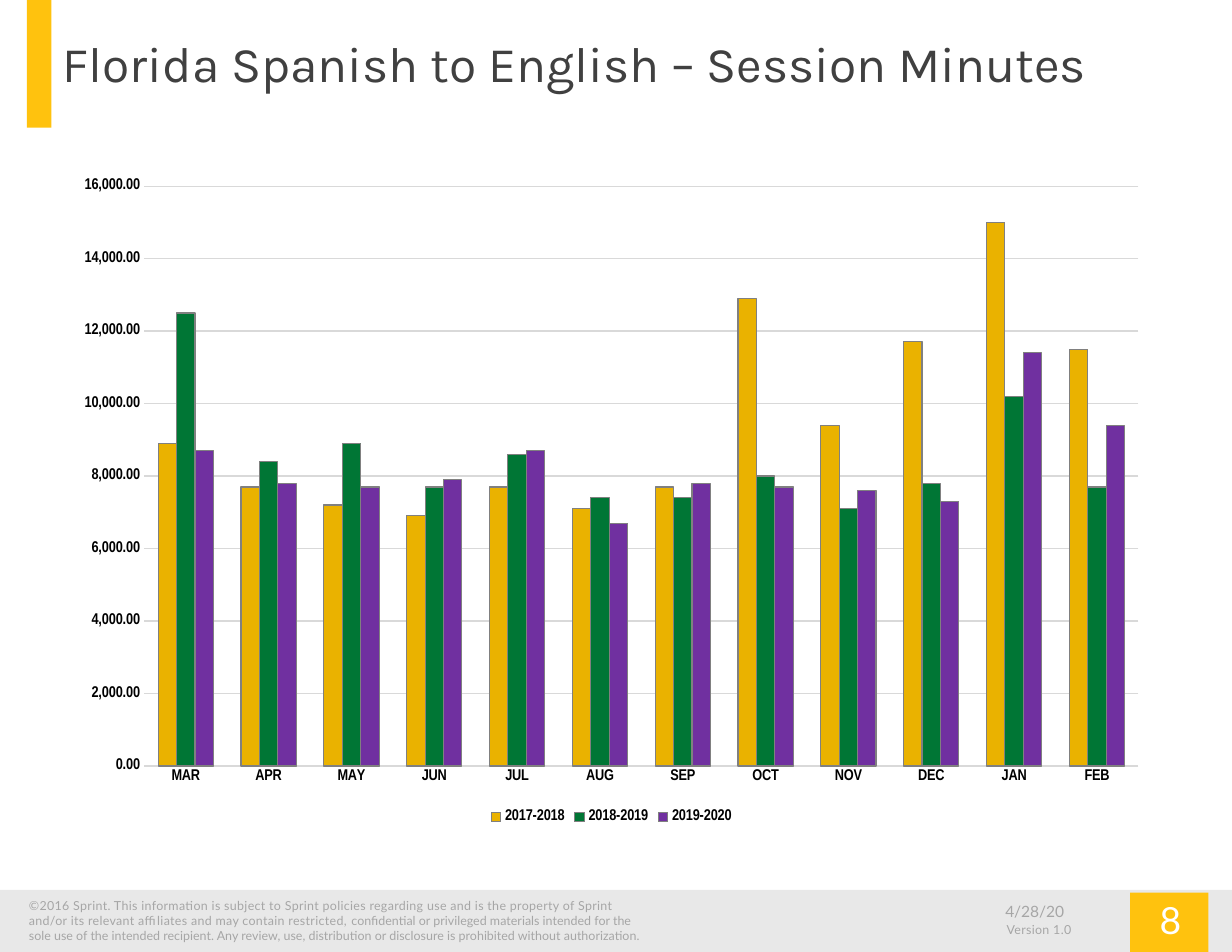
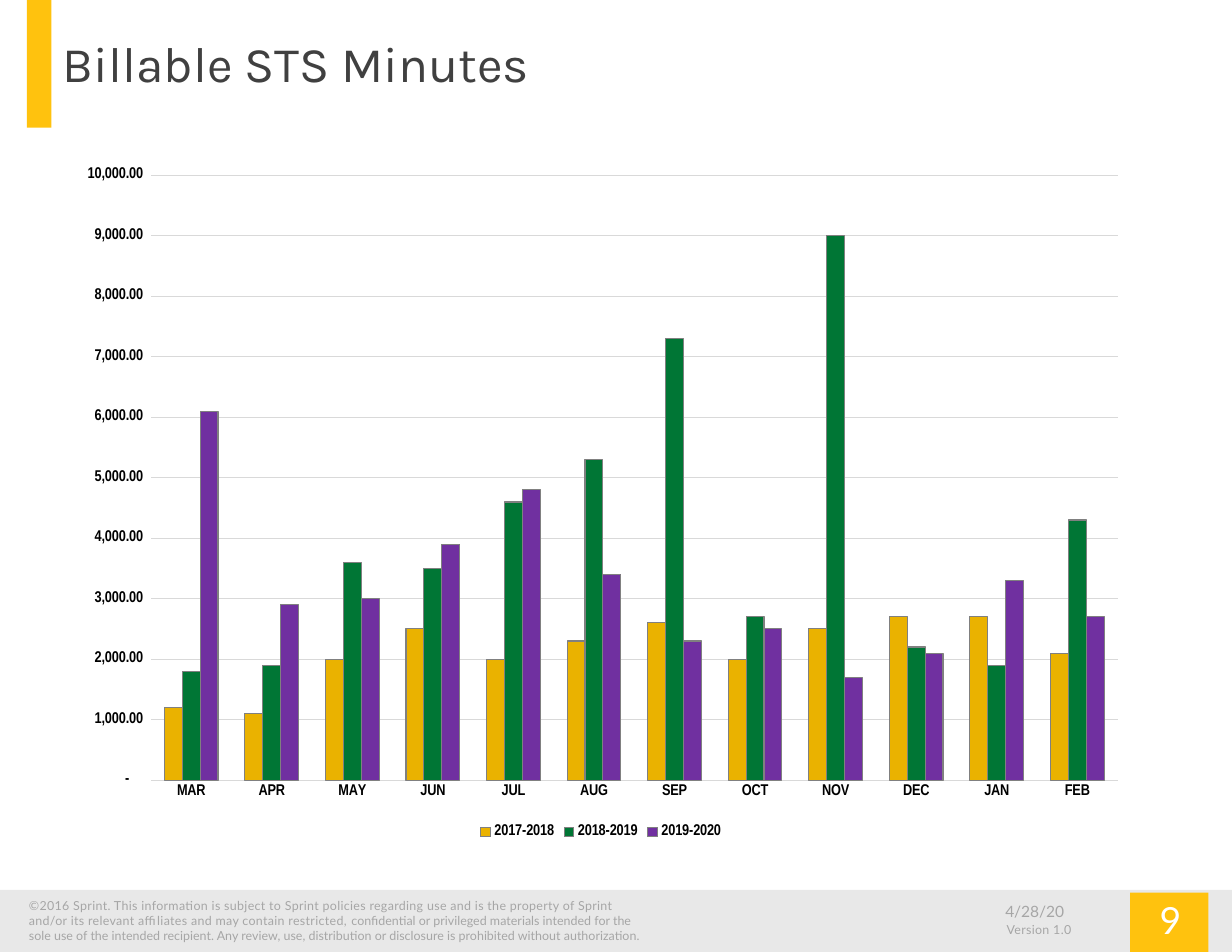
"""Build two slides of monthly minutes as clustered column charts."""
from pptx import Presentation
from pptx.chart.data import CategoryChartData
from pptx.dml.color import RGBColor
from pptx.enum.chart import XL_CHART_TYPE, XL_LEGEND_POSITION, XL_TICK_MARK
from pptx.enum.shapes import MSO_SHAPE
from pptx.enum.text import MSO_ANCHOR, PP_ALIGN
from pptx.util import Pt

COLORS = {
    "accent": "FFC20E", "band": "E8E8E8", "muted": "A6A6A6", "white": "FFFFFF",
    "title": "404040", "black": "000000", "grid": "D9D9D9", "outline": "808080",
    "2017-2018": "EAB200", "2018-2019": "007635", "2019-2020": "7030A0",
}
MONTHS = ["MAR", "APR", "MAY", "JUN", "JUL", "AUG",
          "SEP", "OCT", "NOV", "DEC", "JAN", "FEB"]
NOTICE = [
    ("©2016 Sprint. This information is subject to Sprint policies regarding use "
     "and is the property of Sprint and/or its relevant affiliates and may contain "
     "restricted, ", 0.2),
    ("confidential or privileged materials intended for the sole use of the intended "
     "recipient. Any review, use, distribution or disclosure is prohibited without "
     "authorization.", 0),
]
SLIDES = [
    {
        "number": 8,
        "title": "Florida Spanish to English – Session Minutes",
        "box": (40.3, 106.6, 705.6, 426.2),
        "top": 16000, "step": 2000, "fmt": "#,##0.00",
        "minutes": {
            "2017-2018": [8900, 7700, 7200, 6900, 7700, 7100,
                          7700, 12900, 9400, 11700, 15000, 11500],
            "2018-2019": [12500, 8400, 8900, 7700, 8600, 7400,
                          7400, 8000, 7100, 7800, 10200, 7700],
            "2019-2020": [8700, 7800, 7700, 7900, 8700, 6700,
                          7800, 7700, 7600, 7300, 11400, 9400],
        },
    },
    {
        "number": 9,
        "title": "Billable STS Minutes",
        "box": (40.3, 99.4, 692, 442.8),
        "top": 10000, "step": 1000,
        "fmt": '_(* #,##0.00_);_(* \\(#,##0.00\\);_(* "-"??_);_(@_)',
        "minutes": {
            "2017-2018": [1200, 1100, 2000, 2500, 2000, 2300,
                          2600, 2000, 2500, 2700, 2700, 2100],
            "2018-2019": [1800, 1900, 3600, 3500, 4600, 5300,
                          7300, 2700, 9000, 2200, 1900, 4300],
            "2019-2020": [6100, 2900, 3000, 3900, 4800, 3400,
                          2300, 2500, 1700, 2100, 3300, 2700],
        },
    },
]


class Deck:
    """Hold the style and the current slide."""

    def __init__(self):
        self.prs = Presentation()
        self.prs.slide_width, self.prs.slide_height = Pt(792), Pt(612)
        self.s = None

    def color(self, name):
        return RGBColor.from_string(COLORS[name])

    def style(self, font, size, color, name="Lato", bold=False):
        font.size, font.name, font.bold = Pt(size), name, bold
        font.color.rgb = self.color(color)

    def rect(self, box, color):
        sp = self.s.shapes.add_shape(MSO_SHAPE.RECTANGLE, *map(Pt, box))
        sp.shadow.inherit = False
        sp.fill.solid()
        sp.fill.fore_color.rgb = self.color(color)
        sp.line.fill.background()

    def text(self, box, runs, size, color="muted", name="Lato",
             align=PP_ALIGN.LEFT, anchor=MSO_ANCHOR.TOP, insets=(7.2, 3.6)):
        tf = self.s.shapes.add_textbox(*map(Pt, box)).text_frame
        tf.word_wrap, tf.vertical_anchor = True, anchor
        tf.margin_left = tf.margin_right = Pt(insets[0])
        tf.margin_top = tf.margin_bottom = Pt(insets[1])
        p = tf.paragraphs[0]
        p.alignment = align
        self.style(p.font, size, color, name)
        for words, spacing in runs:
            r = p.add_run()
            r.text = words
            if spacing:
                r._r.get_or_add_rPr().set("spc", str(round(spacing * 100)))

    def frame(self, title, number):
        self.s = self.prs.slides.add_slide(self.prs.slide_layouts[6])
        self.rect((17.3, 0, 15.8, 82), "accent")
        self.rect((0, 572, 792, 40), "band")
        self.rect((726.5, 573.8, 50.4, 38.2), "accent")
        self.text((11.5, 573.8, 414, 46), NOTICE, 8)
        self.text((702.7, 573.8, 99.4, 34.6), [(str(number), 0)], 24, "white",
                  align=PP_ALIGN.CENTER, insets=(5.8, 2.9))
        self.text((565.2, 576, 126, 19.4), [("4/28/20", 0)], 10,
                  align=PP_ALIGN.RIGHT)
        self.text((640, 589, 98, 17.3), [("Version 1.0", 0.2)], 8)
        self.text((40.3, 7.2, 672.5, 66.2), [(title, 0)], 32, "title", "Karla",
                  anchor=MSO_ANCHOR.MIDDLE, insets=(0, 0))

    def columns(self, box, minutes, top, step, fmt):
        data = CategoryChartData(number_format=fmt)
        data.categories = MONTHS
        for year, values in minutes.items():
            data.add_series(year, values)
        chart = self.s.shapes.add_chart(
            XL_CHART_TYPE.COLUMN_CLUSTERED, *map(Pt, box), data).chart
        chart.has_title = False
        self.style(chart.font, 10, "black")
        chart.has_legend = True
        chart.legend.position = XL_LEGEND_POSITION.BOTTOM
        chart.legend.include_in_layout = False
        self.style(chart.legend.font, 10, "black", "Arial Narrow", True)
        for axis in (chart.category_axis, chart.value_axis):
            axis.major_tick_mark = axis.minor_tick_mark = XL_TICK_MARK.NONE
            axis.format.line.fill.background()
            self.style(axis.tick_labels.font, 10, "black", "Arial Narrow", True)
        axis = chart.value_axis
        axis.minimum_scale, axis.maximum_scale, axis.major_unit = 0, top, step
        axis.tick_labels.number_format = fmt
        axis.tick_labels.number_format_is_linked = False
        axis.has_major_gridlines = True
        self.outline(axis.major_gridlines.format.line, "grid")
        plot = chart.plots[0]
        plot.gap_width, plot.overlap, plot.vary_by_categories = 150, 0, False
        for series in plot.series:
            series.format.fill.solid()
            series.format.fill.fore_color.rgb = self.color(series.name)
            self.outline(series.format.line, "outline")

    def outline(self, line, color):
        line.color.rgb = self.color(color)
        line.width = Pt(0.75)


def main():
    deck = Deck()
    for page in SLIDES:
        deck.frame(page["title"], page["number"])
        deck.columns(page["box"], page["minutes"], page["top"], page["step"],
                     page["fmt"])
    deck.prs.save("out.pptx")


if __name__ == "__main__":
    main()
